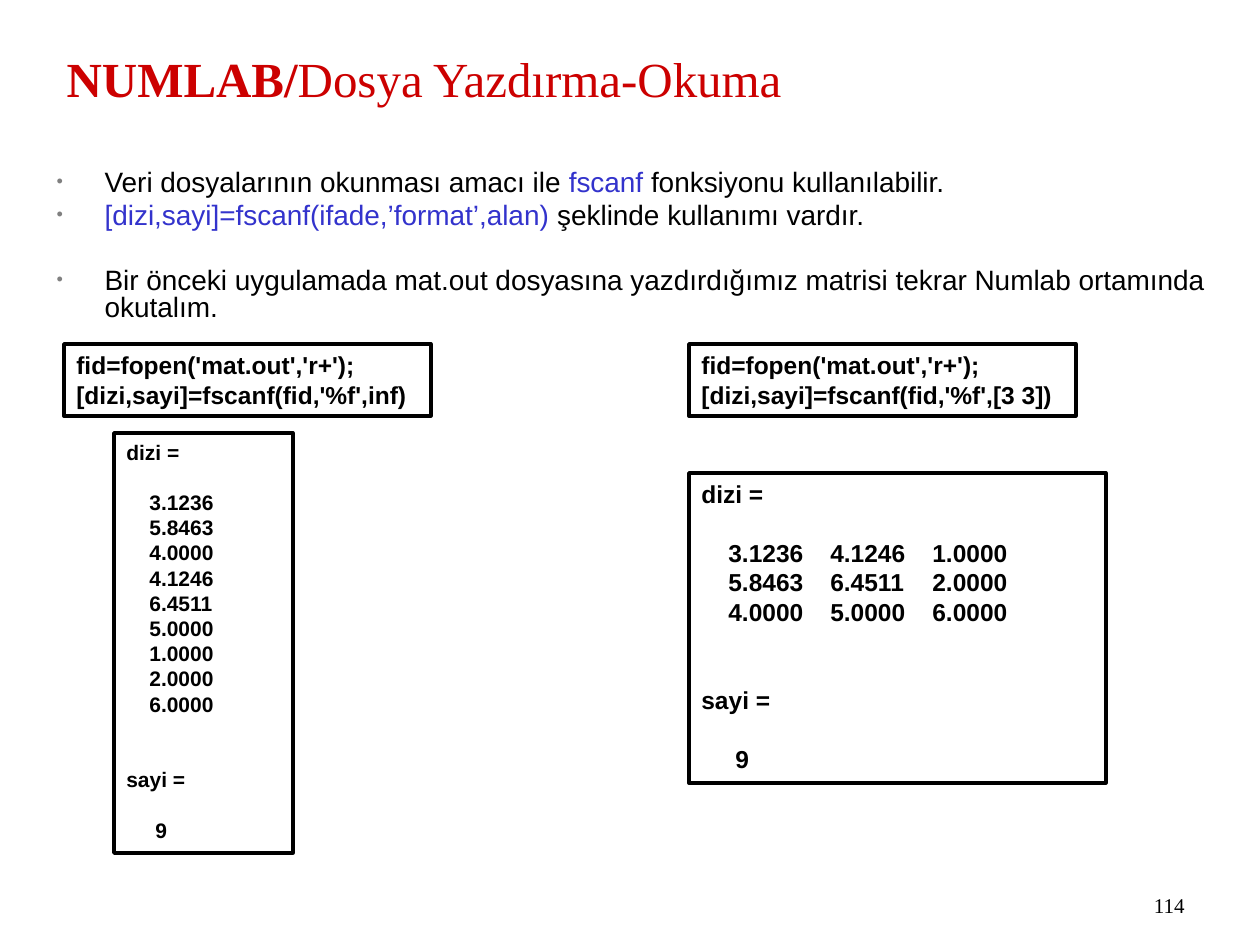
from typing import NamedTuple

from lxml import etree
from pptx import Presentation
from pptx import util as u
from pptx.dml.color import RGBColor
from pptx.enum import shapes, text
from pptx.oxml import ns

EMU_PER_PX = 914400 / 126
BLACK = RGBColor(0x00, 0x00, 0x00)
RED = RGBColor(0xCC, 0x00, 0x00)
BLUE = RGBColor(0x33, 0x33, 0xCC)
GRAY = RGBColor(0x80, 0x80, 0x80)
SANS = "Arial"
SERIF = "Times New Roman"
LINE_FACTOR = 1.2


class Frame(NamedTuple):
    left: int
    top: int
    width: int
    height: int


class Line(NamedTuple):
    """One line of a listing; blanks counts the empty lines above it."""
    text: str
    blanks: int = 0
    tabs: tuple[int, ...] = ()


class Listing(NamedTuple):
    frame: Frame
    size: int
    lines: list[Line]


class Bullet(NamedTuple):
    spans: list[tuple[str, RGBColor]]
    before: int


def px(length: float) -> u.Emu:
    return u.Emu(round(length * EMU_PER_PX))


def place(box, frame: Frame) -> None:
    box.left, box.top, box.width, box.height = map(px, frame)


def add_span(para, words: str, *, size: int, font: str = SANS,
             color: RGBColor = BLACK, bold: bool = False) -> None:
    span = para.add_run()
    span.text = words
    span.font.name = font
    span.font.size = u.Pt(size)
    span.font.bold = bold
    span.font.color.rgb = color


def next_para(frame, index: int):
    return frame.add_paragraph() if index else frame.paragraphs[0]


def add_element(parent, tag: str, **attributes: str):
    return etree.SubElement(parent, ns.qn(tag), attributes)


def set_bullet(para, indent: int) -> None:
    props = para._p.get_or_add_pPr()
    props.set("marL", str(px(indent)))
    props.set("indent", str(px(-indent)))
    add_element(add_element(props, "a:buClr"), "a:srgbClr", val=str(GRAY))
    add_element(props, "a:buSzPct", val="65000")
    add_element(props, "a:buChar", char="•")


def set_tabs(para, stops: tuple[int, ...]) -> None:
    tab_list = add_element(para._p.get_or_add_pPr(), "a:tabLst")
    for stop in stops:
        add_element(tab_list, "a:tab", pos=str(px(stop)), algn="l")


def output_lines(rows: list[str], columns: tuple[int, ...], count_tab: int) -> list[Line]:
    """Console output: the array rows, then the element count."""
    values = [Line("\t" + row, 0 if index else 1, columns)
              for index, row in enumerate(rows)]
    return [Line("dizi ="), *values, Line("sayi =", 2), Line("\t9", 1, (count_tab,))]


def code_lines(shape: str) -> list[Line]:
    return [Line("fid=fopen('mat.out','r+');"),
            Line(f"[dizi,sayi]=fscanf(fid,'%f',{shape})")]


def draw_listing(page, listing: Listing) -> None:
    box = page.shapes.add_shape(shapes.MSO_SHAPE.RECTANGLE, *map(px, listing.frame))
    box.shadow.inherit = False
    box.fill.background()
    box.line.color.rgb = BLACK
    box.line.width = u.Pt(2)
    frame = box.text_frame
    frame.word_wrap = True
    frame.auto_size = text.MSO_AUTO_SIZE.SHAPE_TO_FIT_TEXT
    frame.vertical_anchor = text.MSO_ANCHOR.TOP
    pitch = listing.size * LINE_FACTOR
    for index, line in enumerate(listing.lines):
        para = next_para(frame, index)
        para.alignment = text.PP_ALIGN.LEFT
        para.line_spacing = u.Pt(pitch)
        para.space_before = u.Pt(pitch * line.blanks)
        if line.tabs:
            set_tabs(para, line.tabs)
        add_span(para, line.text, size=listing.size, bold=True)


def draw_title(page) -> None:
    title = page.shapes.title
    place(title, Frame(54, 35, 1134, 117))
    frame = title.text_frame
    frame.auto_size = text.MSO_AUTO_SIZE.NONE
    frame.vertical_anchor = text.MSO_ANCHOR.TOP
    frame.margin_top = px(13)
    para = frame.paragraphs[0]
    para.alignment = text.PP_ALIGN.LEFT
    add_span(para, "NUMLAB/", size=28, font=SERIF, color=RED, bold=True)
    add_span(para, "Dosya Yazdırma-Okuma", size=28, font=SERIF, color=RED)


def draw_bullets(page, bullets: list[Bullet]) -> None:
    body = page.placeholders[1]
    place(body, Frame(44, 125, 1216, 208))
    frame = body.text_frame
    frame.auto_size = text.MSO_AUTO_SIZE.NONE
    frame.vertical_anchor = text.MSO_ANCHOR.TOP
    frame.margin_top = px(46)
    for index, bullet in enumerate(bullets):
        para = next_para(frame, index)
        para.line_spacing = px(27)
        para.space_before = px(bullet.before)
        set_bullet(para, 48)
        for words, color in bullet.spans:
            add_span(para, words, size=16, color=color)


def draw_page_number(page) -> None:
    box = page.shapes.add_textbox(*map(px, Frame(903, 861, 294, 63)))
    frame = box.text_frame
    frame.word_wrap = True
    frame.vertical_anchor = text.MSO_ANCHOR.BOTTOM
    para = frame.paragraphs[0]
    para.alignment = text.PP_ALIGN.RIGHT
    add_span(para, "114", size=12, font=SERIF)


BULLETS = [
    Bullet([("Veri dosyalarının okunması amacı ile ", BLACK), ("fscanf", BLUE),
            (" fonksiyonu kullanılabilir.", BLACK)], 0),
    Bullet([("[dizi,sayi]=fscanf(ifade,’format’,alan) ", BLUE),
            ("şeklinde kullanımı vardır.", BLACK)], 6),
    Bullet([("Bir önceki uygulamada mat.out dosyasına yazdırdığımız matrisi "
             "tekrar Numlab ortamında okutalım.", BLACK)], 38),
]

MATRIX = [("3.1236", "4.1246", "1.0000"),
          ("5.8463", "6.4511", "2.0000"),
          ("4.0000", "5.0000", "6.0000")]
COLUMN_VALUES = [value for column in zip(*MATRIX) for value in column]
MATRIX_ROWS = ["\t".join(row) for row in MATRIX]
MATRIX_TABS = tuple(27 + 102 * column for column in range(3))

LISTINGS = [
    Listing(Frame(64, 344, 367, 72), 14, code_lines("inf")),
    Listing(Frame(114, 433, 179, 420), 12, output_lines(COLUMN_VALUES, (23,), 29)),
    Listing(Frame(689, 344, 387, 72), 14, code_lines("[3 3]")),
    Listing(Frame(689, 473, 417, 310), 14, output_lines(MATRIX_ROWS, MATRIX_TABS, 34)),
]


def main() -> None:
    deck = Presentation()
    deck.slide_width, deck.slide_height = u.Inches(10), u.Inches(7.5)
    page = deck.slides.add_slide(deck.slide_layouts[1])
    draw_title(page)
    draw_page_number(page)
    draw_bullets(page, BULLETS)
    for listing in LISTINGS:
        draw_listing(page, listing)
    deck.save("out.pptx")


if __name__ == "__main__":
    main()
